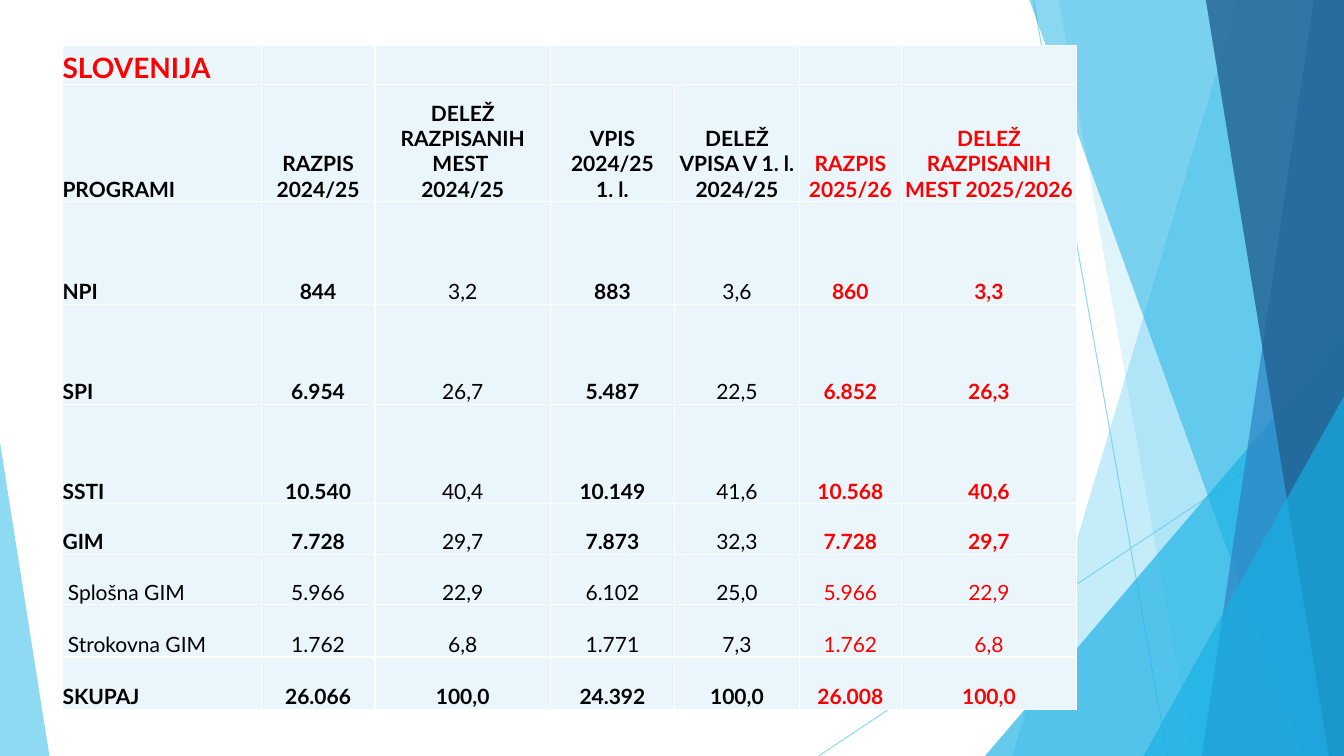
from lxml import etree
from pptx import Presentation
from pptx.dml.color import RGBColor
from pptx.enum.shapes import MSO_CONNECTOR, MSO_SHAPE
from pptx.enum.text import MSO_ANCHOR, PP_ALIGN
from pptx.oxml.ns import qn
from pptx.util import Inches, Pt

STRAIGHT = MSO_CONNECTOR.STRAIGHT
TRIANGLE = MSO_SHAPE.ISOSCELES_TRIANGLE
BOTTOM = MSO_ANCHOR.BOTTOM
LEFT, CENTER = PP_ALIGN.LEFT, PP_ALIGN.CENTER

W, H = 13.33, 7.5
THEME = dict(font="Lato", title=20, body=15, text="000000", accent="FF0000",
             cell="EAF6FC", grid="FFFFFF", sky="5FCBEF", cyan="17B0E4",
             blue="2E83C3", navy="226292")


def set_alpha(s, percent):
    """Make the colour of a fill or line translucent."""
    for clr in s._element.spPr.iter(qn("a:srgbClr")):
        etree.SubElement(clr, qn("a:alpha")).set("val", str(percent * 1000))


def paint(s, color, percent):
    """Flat translucent fill without outline or shadow."""
    s.shadow.inherit = False
    s.fill.solid()
    s.fill.fore_color.rgb = RGBColor.from_string(THEME[color])
    s.line.fill.background()
    set_alpha(s, percent)


prs = Presentation()
prs.slide_width, prs.slide_height = Inches(W), Inches(H)
slide = prs.slides.add_slide(prs.slide_layouts[6])
shapes = slide.shapes

# Thin rays behind the facets
for x1, y1, x2, y2 in [(10.25, 0, 11.58, H), (W, 4.03, 8.12, H)]:
    s = shapes.add_connector(STRAIGHT, Inches(x1), Inches(y1), Inches(x2), Inches(y2))
    s.line.color.rgb = RGBColor.from_string(THEME["sky"])
    s.line.width = Pt(0.75)
    set_alpha(s, 70)
    etree.SubElement(s._element.spPr, qn("a:effectLst"))

# Facets: bands (top x, bottom x) reach the right edge, triangles (left, top, width, apex) the bottom
facets = [
    ("band", (12.28, 10.04), "sky", 36),
    ("band", (10.5, 11.83), "sky", 20),
    ("triangle", (9.77, 3.33, 3.56, 1), "cyan", 66),
    ("band", (10.21, 12.91), "cyan", 50),
    ("band", (13.03, 11.92), "blue", 70),
    ("band", (11.96, 13.18), "navy", 80),
    ("triangle", (11.34, 3.93, 1.99, 1), "cyan", 66),
    ("triangle", (0, 4.39, 0.49, 0), "sky", 70),
]
for kind, place, color, percent in facets:
    if kind == "band":
        top_x, bottom_x = place
        outline = shapes.build_freeform(Inches(top_x), 0)
        corners = [(W, 0), (W, H), (bottom_x, H)]
        outline.add_line_segments([(Inches(x), Inches(y)) for x, y in corners], close=True)
        s = outline.convert_to_shape()
    else:
        left, top, width, apex = place
        s = shapes.add_shape(TRIANGLE, Inches(left), Inches(top), Inches(width), Inches(H - top))
        s.adjustments[0] = apex
    paint(s, color, percent)

# Table content; a line break starts a new paragraph
rows = [
    ["SLOVENIJA", "", "", "", "", "", ""],
    ["PROGRAMI", "RAZPIS 2024/25", "DELEŽ RAZPISANIH MEST \n2024/25", "VPIS 2024/25\n1. l.",
     "DELEŽ VPISA V 1. l. 2024/25", "RAZPIS 2025/26", "DELEŽ RAZPISANIH MEST 2025/2026"],
    ["NPI", "844", "3,2", "883", "3,6", "860", "3,3"],
    ["SPI", "6.954", "26,7", "5.487", "22,5", "6.852", "26,3"],
    ["SSTI", "10.540", "40,4", "10.149", "41,6", "10.568", "40,6"],
    ["GIM", "7.728", "29,7", "7.873", "32,3", "7.728", "29,7"],
    [" Splošna GIM", "5.966", "22,9", "6.102", "25,0", "5.966", "22,9"],
    [" Strokovna GIM", "1.762", "6,8", "1.771", "7,3", "1.762", "6,8"],
    ["SKUPAJ", "26.066", "100,0", "24.392", "100,0", "26.008", "100,0"],
]
col_widths = [1.97, 1.13, 1.74, 1.23, 1.24, 1.01, 1.74]
row_heights = [0.39, 1.16, 1.02, 0.99, 0.99, 0.5, 0.5, 0.52, 0.52]
SUBPROGRAMS = (6, 7)
PROGRAMS = (2, 3, 4, 5)
SHARE_COLS = (2, 4)
NEW_YEAR_COLS = (5, 6)

table = shapes.add_table(len(rows), len(col_widths), Inches(0.62), Inches(0.45),
                         Inches(sum(col_widths)), Inches(sum(row_heights))).table
table.first_row = table.horz_banding = False
for col, width in zip(table.columns, col_widths):
    col.width = Inches(width)
for row, height in zip(table.rows, row_heights):
    row.height = Inches(height)
table.cell(0, 3).merge(table.cell(0, 4))

for i, row in enumerate(rows):
    for j, text in enumerate(row):
        cell = table.cell(i, j)
        cell.margin_left = cell.margin_right = cell.margin_top = cell.margin_bottom = 0
        cell.vertical_anchor = BOTTOM

        # White borders come before the fill in the cell properties
        tcPr = cell._tc.get_or_add_tcPr()
        for side in ("a:lnL", "a:lnR", "a:lnT", "a:lnB"):
            ln = etree.SubElement(tcPr, qn(side), w=str(Pt(1)))
            fill = etree.SubElement(ln, qn("a:solidFill"))
            etree.SubElement(fill, qn("a:srgbClr"), val=THEME["grid"])
        cell.fill.solid()
        cell.fill.fore_color.rgb = RGBColor.from_string(THEME["cell"])

        if not text:
            continue
        red = i == 0 or j in NEW_YEAR_COLS
        light = i in SUBPROGRAMS or (i in PROGRAMS and j in SHARE_COLS)
        tf = cell.text_frame
        for n, part in enumerate(text.split("\n")):
            p = tf.add_paragraph() if n else tf.paragraphs[0]
            p.alignment = CENTER if j else LEFT
            r = p.add_run()
            r.text = part
            r.font.name = THEME["font"]
            r.font.size = Pt(THEME["body"] if i else THEME["title"])
            r.font.bold = not light
            r.font.color.rgb = RGBColor.from_string(THEME["accent" if red else "text"])

prs.save("out.pptx")
